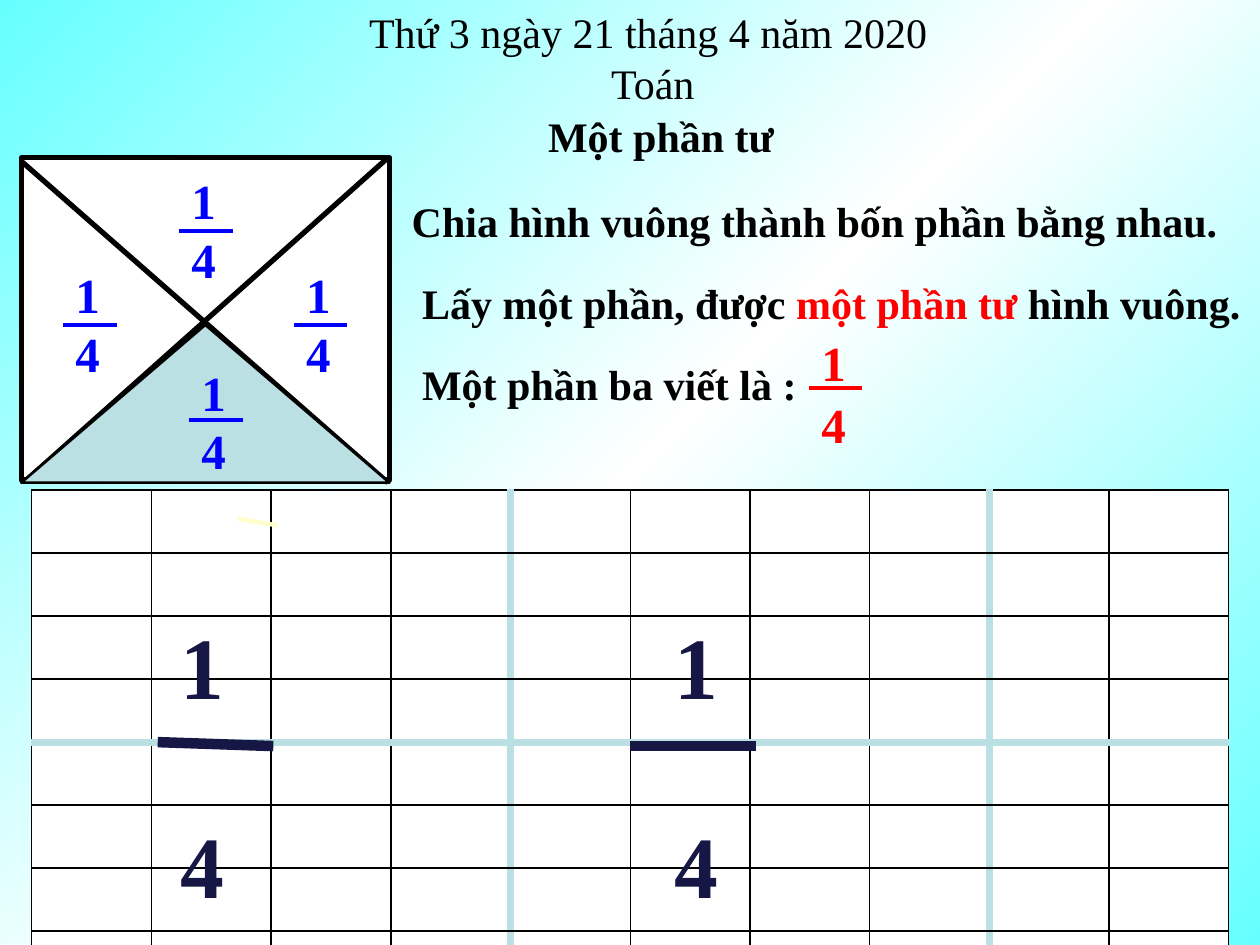
from copy import deepcopy
from lxml.etree import SubElement
from pptx import Presentation
from pptx.dml.color import RGBColor
from pptx.enum.shapes import MSO_CONNECTOR, MSO_SHAPE
from pptx.enum.text import MSO_ANCHOR, MSO_AUTO_SIZE, PP_ALIGN
from pptx.oxml import parse_xml
from pptx.oxml.ns import nsdecls, qn
from pptx.util import Cm, Pt

BLACK = RGBColor(0x00, 0x00, 0x00)
WHITE = RGBColor(0xFF, 0xFF, 0xFF)
RED = RGBColor(0xFF, 0x00, 0x00)
BLUE = RGBColor(0x00, 0x00, 0xFF)
NAVY = RGBColor(0x17, 0x17, 0x45)
CYAN = RGBColor(0x66, 0xFF, 0xFF)
TEAL = RGBColor(0xBB, 0xE0, 0xE3)
CREAM = RGBColor(0xFF, 0xFF, 0xCC)

deck = Presentation()
deck.slide_width, deck.slide_height = Cm(25.4), Cm(19.05)
slide = deck.slides.add_slide(deck.slide_layouts[6])


def write(left, top, width, height, lines, size=24, color=BLACK, bold=True,
          wrap=True, middle=False, align=PP_ALIGN.LEFT):
    box = slide.shapes.add_textbox(Cm(left), Cm(top), Cm(width), Cm(height))
    frame = box.text_frame
    frame.word_wrap = wrap
    if middle:
        frame.vertical_anchor = MSO_ANCHOR.MIDDLE
    else:
        frame.auto_size = MSO_AUTO_SIZE.SHAPE_TO_FIT_TEXT
    frame.text = "\n".join(lines)
    for para in frame.paragraphs:
        para.alignment = align
        para.font.name = "Times New Roman"
        para.font.size = Pt(size)
        para.font.bold = bold
        para.font.color.rgb = color
    return frame


def draw(home, left, top, right, bottom, color, weight):
    line = home.add_connector(MSO_CONNECTOR.STRAIGHT, Cm(left), Cm(top), Cm(right), Cm(bottom))
    line.line.color.rgb = color
    line.line.width = Pt(weight)
    SubElement(line._element.spPr, qn("a:effectLst"))


fill = slide.background.fill
fill.gradient()
fill.gradient_angle = 315
stops = slide._element.find(".//" + qn("a:gsLst"))
stops.append(deepcopy(stops[0]))
for stop, spot, color in zip(fill.gradient_stops, (0, 0.5, 1), (CYAN, WHITE, CYAN)):
    stop.position = spot
    stop.color.rgb = color

write(12.07, 1.04, 2.21, 1.27, ["Toán"], bold=False, wrap=False)
write(7.19, 0, 11.86, 1.27, ["Thứ 3 ngày 21 tháng 4 năm 2020"], bold=False, wrap=False)
write(10.8, 2.11, 5.11, 1.27, ["Một phần tư"], wrap=False)
write(8.05, 3.81, 16.94, 1.27, ["Chia hình vuông thành bốn phần bằng nhau."])
para = write(8.26, 5.46, 18.21, 1.27, ["Lấy một phần, được "]).paragraphs[0]
for text, color in (("một phần tư ", RED), ("hình vuông.", BLACK)):
    run = para.add_run()
    run.text = text
    run.font.color.rgb = color
write(8.26, 6.78, 15.04, 1.93, ["Một phần ba viết là :"], middle=True)

for digit, top in (("1", 6.58), ("4", 7.82)):
    write(16.31, top, 1.32, 1.45, [digit], 28, RED)
draw(slide.shapes, 16.31, 7.82, 17.37, 7.82, RED, 2.25)

ROWS, COLS = 8, 10
grid = slide.shapes.add_table(ROWS, COLS, Cm(0.64), Cm(9.88), Cm(24.13), Cm(10.16)).table
grid.first_row = grid.horz_banding = False
for row in grid.rows:
    row.height = Cm(1.27)
for r in range(ROWS):
    for c in range(COLS):
        cell = grid.cell(r, c)
        cell.fill.solid()
        cell.fill.fore_color.rgb = WHITE
        thick = {"L": c in (4, 8), "R": c in (3, 7), "T": r == 4, "B": r == 3}
        for i, side in enumerate("LRTB"):
            color, weight = (TEAL, 4.5) if thick[side] else (BLACK, 1)
            cell._tc.tcPr.insert(i, parse_xml(
                f'<a:ln{side} {nsdecls("a")} w="{int(Pt(weight))}"><a:solidFill>'
                f'<a:srgbClr val="{color}"/></a:solidFill></a:ln{side}>'))

for left in (3.38, 13.34):
    for digit, top in (("1", 12.22), ("4", 16.23)):
        write(left, top, 1.9, 2.39, [digit], 50, NAVY)
draw(slide.shapes, 3.18, 14.96, 5.51, 15.04, NAVY, 6)
draw(slide.shapes, 12.7, 15.04, 15.24, 15.04, NAVY, 6)
draw(slide.shapes, 4.8, 10.46, 5.59, 10.59, CREAM, 2.5)

group = slide.shapes.add_group_shape()
square = group.shapes.add_shape(MSO_SHAPE.RECTANGLE, Cm(0.43), Cm(3.18), Cm(7.42), Cm(6.5))
draw(group.shapes, 0.43, 3.25, 7.82, 9.73, BLACK, 3)
draw(group.shapes, 7.82, 3.18, 0.53, 9.68, BLACK, 3)
part = slide.shapes.add_shape(MSO_SHAPE.ISOSCELES_TRIANGLE, Cm(0.43), Cm(6.55), Cm(7.42), Cm(3.18))
for shape, color, weight in ((square, WHITE, 3), (part, TEAL, 1.5)):
    shape.shadow.inherit = False
    shape.fill.solid()
    shape.fill.fore_color.rgb = color
    shape.line.color.rgb = BLACK
    shape.line.width = Pt(weight)

for left, top, bar in ((3.81, 7.62, 8.46), (1.27, 5.66, 6.55), (5.92, 5.66, 6.55), (3.61, 3.76, 4.65)):
    write(left, top, 0.94, 1.73, ["1", "4"], 28, BLUE, wrap=False, middle=True, align=PP_ALIGN.CENTER)
    draw(slide.shapes, left, bar, left + 1.08, bar, BLUE, 2.25)

deck.save("out.pptx")
